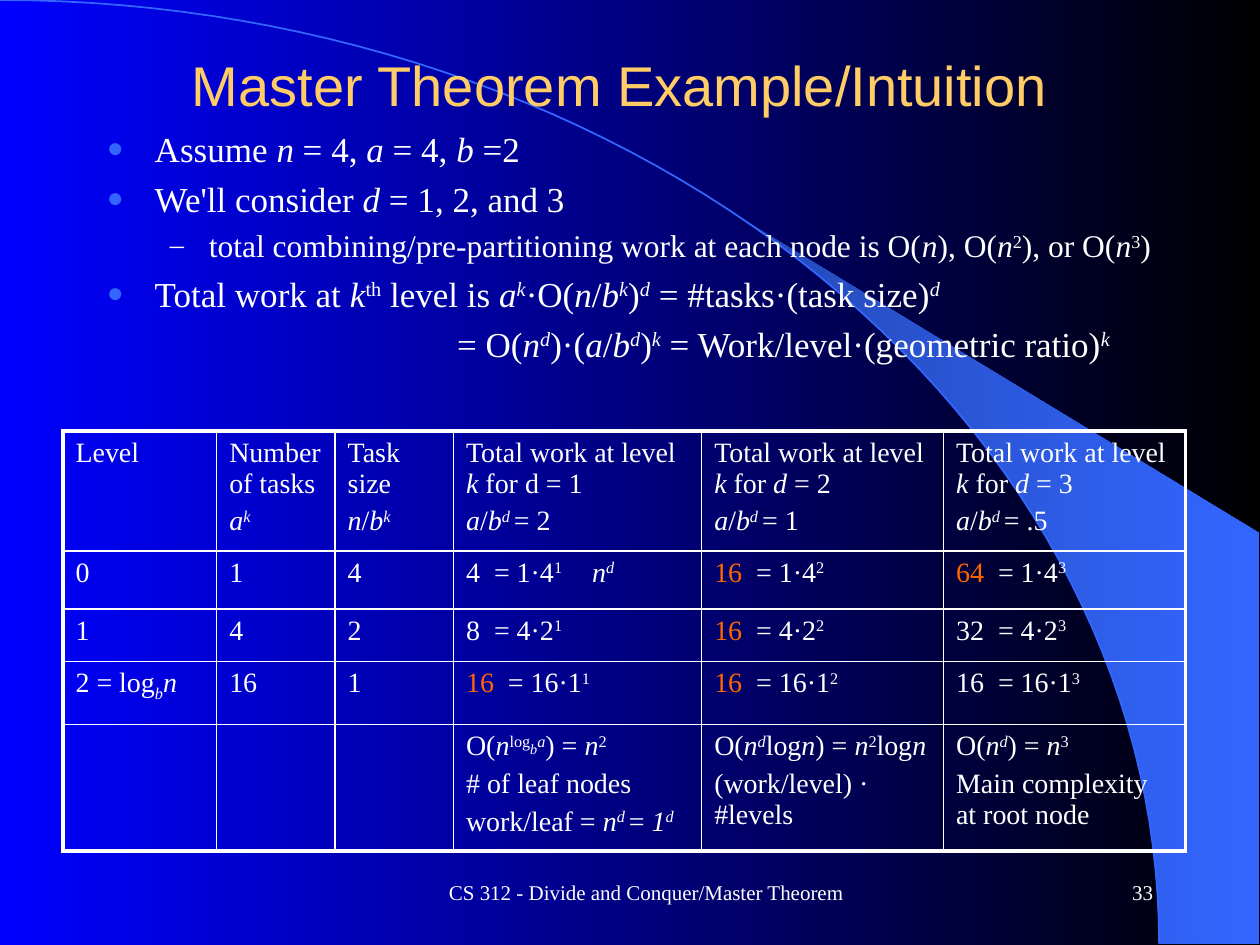
import math
from lxml import etree
from pptx import Presentation, util as u
from pptx.dml import color
from pptx.enum import text
from pptx.oxml import ns

WHITE, BLUE, GOLD, RED = "FFFFFF", "3366FF", "FFCC66", "FF6600"
SERIF, SANS = "Times New Roman", "Arial"
ALIGN = text.PP_ALIGN
MIDDLE = text.MSO_ANCHOR.MIDDLE


def rgb(code):
    return color.RGBColor.from_string(code)


def node(parent, tag, **attrs):
    return etree.SubElement(parent, ns.qn(tag), {k: str(v) for k, v in attrs.items()})


def blend(fill, *codes):
    fill.gradient()
    fill.gradient_angle = 0
    for stop, code in zip(fill.gradient_stops, codes):
        stop.color.rgb = rgb(code)


def split(line):
    state = dict.fromkeys("*^_`~", False)
    part = ""
    for char in line + "*":
        if char not in state:
            part += char
            continue
        if part:
            yield part, dict(state)
        part = ""
        state[char] = not state[char]


def write(para, line, size=16, font=SERIF, tint=WHITE, align=ALIGN.LEFT, gap=0.23,
          left=0, hang=0, mark=None, mark_tint=BLUE, mark_size=80, tab=None):
    para.alignment = align
    para.space_before = u.Pt(round(size * gap, 1))
    props = para._p.get_or_add_pPr()
    props.set("marL", str(u.Inches(left)))
    props.set("indent", str(u.Inches(-hang)))
    if mark:
        node(node(props, "a:buClr"), "a:srgbClr", val=mark_tint)
        node(props, "a:buSzPct", val=mark_size * 1000)
        node(props, "a:buFont", typeface=SERIF)
        node(props, "a:buChar", char=mark)
    else:
        node(props, "a:buNone")
    if tab:
        node(node(props, "a:tabLst"), "a:tab", pos=u.Inches(tab), algn="l")
    for part, on in split(line):
        run = para.add_run()
        run.text = part
        run.font.name = font
        run.font.size = u.Pt(14 if on["`"] else size)
        run.font.italic = on["*"]
        run.font.color.rgb = rgb(RED if on["~"] else tint)
        shift = 6 if on["`"] else 30 if on["^"] else -25 if on["_"] else 0
        if shift:
            run.font._element.set("baseline", str(shift * 1000))


def fill_frame(frame, lines, **style):
    for i, line in enumerate(lines):
        para = frame.add_paragraph() if i else frame.paragraphs[0]
        own = {}
        if isinstance(line, tuple):
            line, own = line
        write(para, line, **{**style, **own})


class Deck:
    def __init__(self):
        self.file = Presentation()
        self.file.slide_width = u.Inches(10)
        self.file.slide_height = u.Inches(7.5)
        self.slide = self.file.slides.add_slide(self.file.slide_layouts[6])

    def ground(self, *codes):
        blend(self.slide.background.fill, *codes)

    def shape(self, points, close, fill=None, line=None):
        spots = [(u.Inches(x), u.Inches(y)) for x, y in points]
        pen = self.slide.shapes.build_freeform(*spots[0], scale=1.0)
        pen.add_line_segments(spots[1:], close=close)
        form = pen.convert_to_shape()
        form.shadow.inherit = False
        if fill:
            blend(form.fill, *fill)
        else:
            form.fill.background()
        if line:
            form.line.color.rgb = rgb(line)
            form.line.width = u.Pt(1)
        else:
            form.line.fill.background()

    def label(self, box, lines, anchor=text.MSO_ANCHOR.TOP, **style):
        frame = self.slide.shapes.add_textbox(*map(u.Inches, box)).text_frame
        frame.word_wrap = True
        frame.vertical_anchor = anchor
        fill_frame(frame, lines, **style)

    def table(self, left, top, widths, heights, data):
        box = map(u.Inches, (left, top, sum(widths), sum(heights)))
        grid = self.slide.shapes.add_table(len(heights), len(widths), *box).table
        grid.first_row = grid.horz_banding = False
        for col, width in zip(grid.columns, widths):
            col.width = u.Inches(width)
        for row, height in zip(grid.rows, heights):
            row.height = u.Inches(height)
        for r, items in enumerate(data):
            for c, lines in enumerate(items):
                cell = grid.cell(r, c)
                self.edge(cell, L=c == 0, R=c == len(widths) - 1,
                          T=r == 0, B=r == len(heights) - 1)
                cell.fill.background()
                fill_frame(cell.text_frame, lines)

    def edge(self, cell, **sides):
        props = cell._tc.get_or_add_tcPr()
        for side, outer in sides.items():
            line = node(props, "a:ln" + side, w=u.Pt(2.25 if outer else 1))
            node(node(line, "a:solidFill"), "a:srgbClr", val=WHITE)


def arc(start, steps=60):
    for i in range(steps + 1):
        turn = start + (math.pi / 2 - start) * i / steps
        yield 9.2 * math.sin(turn), 7.49 * (1 - math.cos(turn))


def body():
    dot = dict(size=20, left=0.38, hang=0.38, mark="●")
    dash = dict(size=18, left=0.81, hang=0.31, mark="–", mark_tint=WHITE, mark_size=90)
    return [
        ("Assume *n* = 4, *a* = 4, *b* =2", dot),
        ("We'll consider *d* = 1, 2, and 3", dot),
        ("total combining/pre-partitioning work at each node is "
         "O(*n*), O(*n*^2^), or O(*n*^3^)", dash),
        ("Total work at *k*^th^ level is *a^k^*·O(*n*/*b^k^*)^*d*^"
         " = #tasks·(task size)^*d*^", dot),
        ("= O(*n^d^*)·(*a*/*b^d^*)^*k*^ = Work/level·(geometric ratio)^*k*^",
         dict(size=20, left=2.78)),
    ]


def work(level, power):
    tasks, size = 4 ** level, 4 // 2 ** level
    total = tasks * size ** power
    mark = "~" if total == max(16, 4 ** power) else ""
    note = "\t*n^d^*" if (level, power) == (0, 1) else ""
    return [(f"{mark}{total}{mark}  = {tasks}·{size}^{power}^{note}", dict(tab=1.05))]


def cells():
    heads = [("d = 1", "2"), ("*d* = 2", "1"), ("*d* = 3", ".5")]
    rows = [[["Level"], ["Number of tasks", "*a^k^*"], ["Task size", "*n*/*b^k^*"]]
            + [[f"Total work at level *k* for {head}", f"*a*/*b^d ^*= {ratio}"]
               for head, ratio in heads]]
    for level, name in enumerate(["0", "1", "2 = log*_b_n*"]):
        rows.append([[name], [str(4 ** level)], [str(4 // 2 ** level)]]
                    + [work(level, power) for power in (1, 2, 3)])
    rows.append([[], [], [],
                 ["O(*n*^log^*`b`^a^*) = *n*^2^", "# of leaf nodes",
                  "work/leaf = *n^d ^*= *1^d^*"],
                 ["O(*n^d^*log*n*) = *n*^2^log*n*", "(work/level) · #levels"],
                 ["O(*n^d^*) = *n*^3^", "Main complexity at root node"]])
    return rows


def main():
    deck = Deck()
    deck.ground("0000FF", "000000")
    deck.shape([*arc(math.asin(0.64)), (9.99, 7.49), (9.99, 4.23)], True,
               fill=("2449B6", BLUE))
    deck.shape(list(arc(0)), False, line=BLUE)
    deck.label((3.17, 6.83, 3.92, 0.5), ["CS 312 - Divide and Conquer/Master Theorem"],
               MIDDLE, size=12, align=ALIGN.CENTER, gap=0)
    deck.label((7.17, 6.83, 2.08, 0.5), ["33"], MIDDLE, size=12, align=ALIGN.RIGHT, gap=0)
    deck.label((0.67, 0.21, 8.5, 0.92), ["Master Theorem Example/Intuition"], MIDDLE,
               size=32, font=SANS, tint=GOLD, align=ALIGN.CENTER, gap=0)
    deck.table(0.5, 3.42, [1.22, 0.94, 0.94, 1.97, 1.92, 1.92],
               [0.88, 0.46, 0.42, 0.5, 0.92], cells())
    deck.label((0.75, 0.96, 8.83, 2.04), body())
    deck.file.save("out.pptx")


if __name__ == "__main__":
    main()
